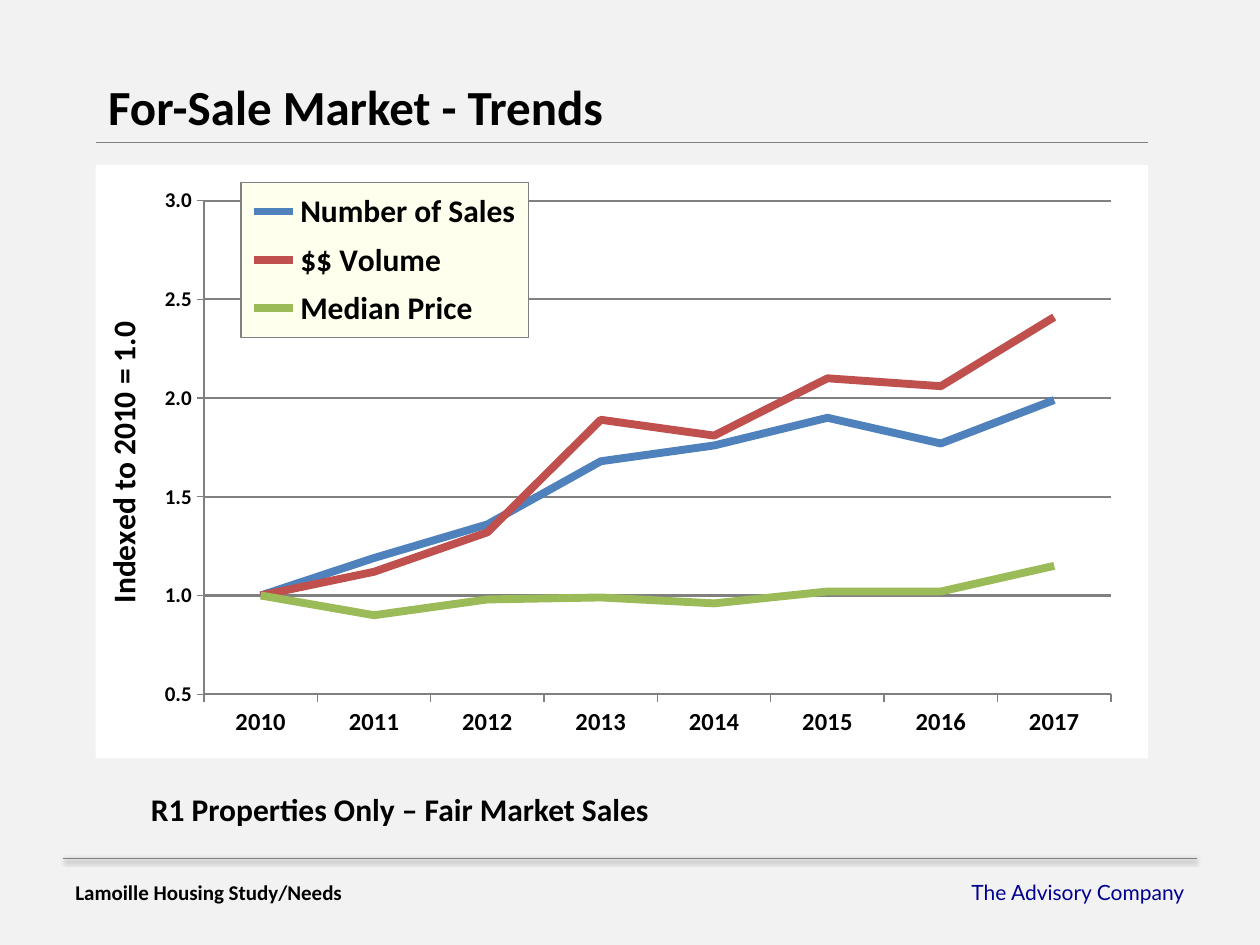
"""Build the For-Sale Market trends slide with an indexed line chart."""
from lxml import etree
from pptx import Presentation
from pptx.chart import data
from pptx.dml.color import RGBColor
from pptx.enum import chart as kinds, shapes, text
from pptx.oxml import parse_xml
from pptx.oxml.ns import nsdecls, qn
from pptx.util import Inches, Pt

COLORS = {"back": "F2F2F2", "rule": "808080", "ink": "000000", "firm": "000090",
          "plot": "FFFFFF", "legend": "FFFFEE"}
SERIES = [
    ("Number of Sales", "4F81BD", [1, 1.19, 1.36, 1.68, 1.76, 1.9, 1.77, 1.99]),
    ("$$ Volume", "C0504D", [1, 1.12, 1.32, 1.89, 1.81, 2.1, 2.06, 2.41]),
    ("Median Price", "9BBB59", [1, 0.9, 0.98, 0.99, 0.96, 1.02, 1.02, 1.15]),
]
LABELS = [
    ("The Advisory Company", 6.54, 6.93, 2.96, 0.3, 12, "Lato", "firm", False, "RIGHT"),
    ("Lamoille Housing Study/Needs", 0.5, 6.93, 2.96, 0.3, 12, "Calibri", "ink", True, "LEFT"),
    ("For-Sale Market - Trends", 0.76, 0.56, 8.65, 0.57, 28, "Calibri", "ink", True, "LEFT"),
    ("R1 Properties Only – Fair Market Sales", 1.1, 6.22, 5.16, 0.4, 18, "Calibri", "ink", True, "LEFT"),
]
RULES = [(0.5, 9.5, 6.81, 0.5, True), (0.76, 9.11, 1.13, 1, False)]


def style_font(font, size, bold=True, color="ink", name="Calibri"):
    font.size = Pt(size)
    font.bold = bold
    font.name = name
    font.color.rgb = RGBColor.from_string(COLORS[color])


def manual_layout(left, top, width, height, inner=False):
    target = '<c:layoutTarget val="inner"/>' if inner else ""
    return parse_xml(
        f'<c:layout {nsdecls("c")}><c:manualLayout>{target}'
        '<c:xMode val="edge"/><c:yMode val="edge"/>'
        f'<c:x val="{left}"/><c:y val="{top}"/><c:w val="{width}"/><c:h val="{height}"/>'
        '</c:manualLayout></c:layout>')


deck = Presentation()
deck.slide_width, deck.slide_height = Inches(10), Inches(7.5)
page = deck.slides.add_slide(deck.slide_layouts[6])

backdrop = page.shapes.add_shape(shapes.MSO_SHAPE.RECTANGLE, 0, 0, deck.slide_width, deck.slide_height)
backdrop.shadow.inherit = False
backdrop.fill.solid()
backdrop.fill.fore_color.rgb = RGBColor.from_string(COLORS["back"])
backdrop.line.color.rgb = RGBColor.from_string(COLORS["back"])
backdrop.line.width = Pt(0.75)

for start, end, height, weight, shaded in RULES:
    rule = page.shapes.add_connector(
        shapes.MSO_CONNECTOR.STRAIGHT, Inches(start), Inches(height), Inches(end), Inches(height))
    rule.line.color.rgb = RGBColor.from_string(COLORS["rule"])
    rule.line.width = Pt(weight)
    effects = etree.SubElement(rule._element.spPr, qn("a:effectLst"))
    if shaded:
        effects.append(parse_xml(
            f'<a:outerShdw {nsdecls("a")} blurRad="{Pt(3.1)}" dist="{Pt(1.6)}" dir="5400000" '
            'rotWithShape="0"><a:srgbClr val="000000"><a:alpha val="38000"/></a:srgbClr></a:outerShdw>'))

for words, left, top, width, height, size, face, color, bold, align in LABELS:
    box = page.shapes.add_textbox(Inches(left), Inches(top), Inches(width), Inches(height))
    box.text_frame.word_wrap = True
    para = box.text_frame.paragraphs[0]
    para.alignment = text.PP_ALIGN[align]
    span = para.add_run()
    span.text = words
    style_font(span.font, size, bold, color, face)

trends = data.CategoryChartData(number_format="0.00")
trends.categories = [str(year) for year in range(2010, 2018)]
for name, color, values in SERIES:
    trends.add_series(name, values)
chart = page.shapes.add_chart(
    kinds.XL_CHART_TYPE.LINE, Inches(0.76), Inches(1.31), Inches(8.35), Inches(4.71), trends).chart
chart.has_title = False
style_font(chart.font, 10, False)
for series, (name, color, values) in zip(chart.plots[0].series, SERIES):
    series.smooth = False
    series.marker.style = kinds.XL_MARKER_STYLE.NONE
    series.format.line.color.rgb = RGBColor.from_string(color)
    series.format.line.width = Pt(4.5)

years, index = chart.category_axis, chart.value_axis
for axis, size in ((years, 14), (index, 12)):
    style_font(axis.tick_labels.font, size)
    axis.major_tick_mark = kinds.XL_TICK_MARK.OUTSIDE
    axis.format.line.color.rgb = RGBColor.from_string(COLORS["rule"])
    axis.format.line.width = Pt(0.75)
index.minimum_scale, index.maximum_scale, index.major_unit = 0.5, 3, 0.5
index.tick_labels.number_format = "0.0"
index.tick_labels.number_format_is_linked = False
index.has_major_gridlines = True
index.major_gridlines.format.line.color.rgb = RGBColor.from_string(COLORS["rule"])
index.major_gridlines.format.line.width = Pt(1.25)
span = index.axis_title.text_frame.paragraphs[0].add_run()
span.text = "Indexed to 2010 = 1.0"
style_font(span.font, 18)

chart.has_legend = True
legend = chart.legend
legend.position = kinds.XL_LEGEND_POSITION.RIGHT
legend.include_in_layout = False
style_font(legend.font, 18)
key = chart.element.find(".//" + qn("c:legend"))
for old in key.findall(qn("c:layout")):
    key.remove(old)
key.find(qn("c:legendPos")).addnext(manual_layout(0.138, 0.029, 0.273, 0.262))

plot_area = chart.element.find(".//" + qn("c:plotArea"))
for old in plot_area.findall(qn("c:layout")):
    plot_area.remove(old)
plot_area.insert(0, manual_layout(0.103, 0.06, 0.862, 0.832, inner=True))

edge = f'<a:solidFill><a:srgbClr val="{COLORS["rule"]}"/></a:solidFill>'
for parent, color, outline in ((key, "legend", edge), (chart.element, "plot", "<a:noFill/>")):
    parent.find(qn("c:txPr")).addprevious(parse_xml(
        f'<c:spPr {nsdecls("c", "a")}><a:solidFill><a:srgbClr val="{COLORS[color]}"/></a:solidFill>'
        f'<a:ln w="{Pt(0.75)}">{outline}</a:ln></c:spPr>'))

deck.save("out.pptx")
